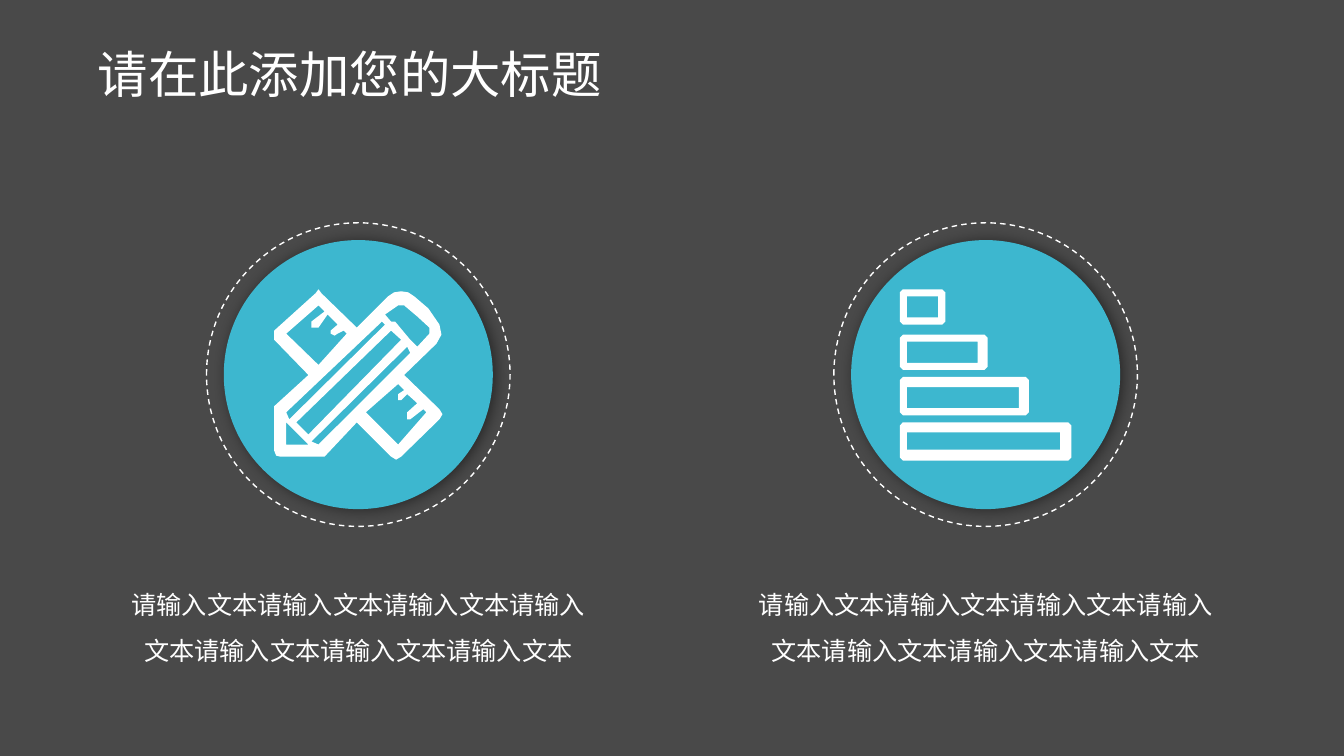
from lxml.etree import SubElement
from pptx import Presentation
from pptx.dml.color import RGBColor
from pptx.enum.dml import MSO_LINE_DASH_STYLE as Dash
from pptx.enum.shapes import MSO_SHAPE as Shape
from pptx.enum.text import MSO_ANCHOR as Anchor, PP_ALIGN as Align
from pptx.oxml.ns import qn
from pptx.util import Cm, Pt

FONT = "Noto Sans CJK SC"
WHITE, BLUE, GREY, BLACK = "FFFFFF", "3DB7CF", "494949", "000000"
TITLE = "请在此添加您的大标题"
CAPTION = "请输入文本请输入文本请输入文本请输入文本请输入文本请输入文本请输入文本"

PENCIL_AND_RULER = [
    [(44, 38), (37, 38), (37, 32), (50, 22), (44, 16), (12, 44), (44, 75), (72, 44),
     (69, 41), (63, 44), (60, 46), (56, 44), (56, 41), (63, 35), (53, 25)],
    [(129, 85), (164, 119), (167, 124), (164, 129), (126, 166), (121, 169), (116, 166),
     (82, 132), (50, 166), (6, 166), (2, 165), (0, 160), (0, 116), (34, 85), (0, 50),
     (0, 41), (41, 4), (44, 0), (47, 4), (82, 38), (113, 7), (119, 3), (126, 2),
     (133, 3), (139, 7), (153, 19), (164, 35), (166, 45), (161, 54)],
    [(91, 122), (123, 154), (151, 122), (148, 119), (135, 129), (132, 129), (132, 122),
     (142, 113), (132, 104), (126, 110), (123, 110), (123, 104), (129, 100), (123, 94)],
    [(34, 144), (126, 50), (116, 41), (22, 132)],
    [(135, 50), (142, 57), (154, 44), (154, 38), (142, 27), (129, 16), (123, 16),
     (110, 25), (116, 32), (120, 32)],
    [(132, 57), (37, 151), (44, 154), (135, 63)],
    [(15, 129), (110, 35), (107, 32), (12, 122)],
    [(12, 132), (12, 154), (34, 154)],
]
BARS = [
    {"outer": (45, 0, 35), "inner": (38, 7, 28)},
    {"outer": (87, 45, 80), "inner": (77, 52, 73)},
    {"outer": (128, 87, 125), "inner": (118, 97, 118)},
    {"outer": (170, 132, 170), "inner": (159, 142, 159)},
]
BAR_CORNER, BAR_INNER_LEFT = 3, 7

CENTER_Y, DISC, RING = 9.44, 6.78, 7.65
CAPTION_TOP, CAPTION_WIDTH, CAPTION_HEIGHT = 14.12, 12.55, 3
ICON_TOP, ICON_UNIT = 7.29, Cm(2.54) / 100


def color(value):
    return RGBColor.from_string(value)


def bar_contours(outer, inner):
    right, top, bottom = outer
    cut = BAR_CORNER
    yield [(cut, top), (right - cut, top), (right, top + cut), (right, bottom - cut),
           (right - cut, bottom), (cut, bottom), (0, bottom - cut), (0, top + cut)]
    right, top, bottom = inner
    yield [(BAR_INNER_LEFT, top), (right, top), (right, bottom), (BAR_INNER_LEFT, bottom)]


def write(shape, text, size, spacing, align):
    frame = shape.text_frame
    frame.word_wrap = True
    frame.vertical_anchor = Anchor.MIDDLE
    frame.text = text
    paragraph = frame.paragraphs[0]
    paragraph.alignment = align
    paragraph.line_spacing = spacing
    font = paragraph.runs[0].font
    font.size = Pt(size)
    font.name = FONT
    font.color.rgb = color(WHITE)
    SubElement(paragraph.runs[0]._r.get_or_add_rPr(), qn("a:ea"), typeface=FONT)


def add_circle(slide, center_x, diameter):
    circle = slide.shapes.add_shape(
        Shape.OVAL, Cm(center_x - diameter / 2), Cm(CENTER_Y - diameter / 2),
        Cm(diameter), Cm(diameter))
    circle.shadow.inherit = False
    return circle


def add_shadow(shape):
    effects = shape._element.spPr.find(qn("a:effectLst"))
    shadow = SubElement(effects, qn("a:outerShdw"), blurRad=str(Pt(10)), dist=str(Pt(2)),
                        dir="0", algn="l", rotWithShape="0")
    shade = SubElement(shadow, qn("a:srgbClr"), val=BLACK)
    SubElement(shade, qn("a:alpha"), val="45000")


def add_icon(slide, left, contours):
    builder = slide.shapes.build_freeform(*contours[0][0], scale=ICON_UNIT)
    for contour in contours:
        builder.move_to(*contour[0])
        builder.add_line_segments(contour[1:], close=True)
    icon = builder.convert_to_shape(Cm(left), Cm(ICON_TOP))
    icon.shadow.inherit = False
    icon.fill.solid()
    icon.fill.fore_color.rgb = color(WHITE)
    icon.line.fill.background()


def add_column(slide, center_x, icon_left, contours):
    disc = add_circle(slide, center_x, DISC)
    disc.fill.solid()
    disc.fill.fore_color.rgb = color(BLUE)
    disc.line.fill.background()
    add_shadow(disc)
    ring = add_circle(slide, center_x, RING)
    ring.fill.background()
    ring.line.color.rgb = color(WHITE)
    ring.line.width = Pt(1)
    ring.line.dash_style = Dash.DASH
    caption = slide.shapes.add_textbox(
        Cm(center_x - CAPTION_WIDTH / 2), Cm(CAPTION_TOP),
        Cm(CAPTION_WIDTH), Cm(CAPTION_HEIGHT))
    write(caption, CAPTION, 18, 1.5, Align.CENTER)
    add_icon(slide, icon_left, contours)


def main():
    presentation = Presentation()
    presentation.slide_width, presentation.slide_height = Cm(33.87), Cm(19.05)
    slide = presentation.slides.add_slide(presentation.slide_layouts[5])
    slide.background.fill.solid()
    slide.background.fill.fore_color.rgb = color(GREY)
    title = slide.shapes.title
    title.left, title.top, title.width, title.height = Cm(2.21), Cm(0.76), Cm(27.79), Cm(2.36)
    write(title, TITLE, 36, 0.9, Align.LEFT)
    bars = [contour for bar in BARS for contour in bar_contours(**bar)]
    add_column(slide, 9.03, 6.91, PENCIL_AND_RULER)
    add_column(slide, 24.84, 22.68, bars)
    presentation.save("out.pptx")


if __name__ == "__main__":
    main()
